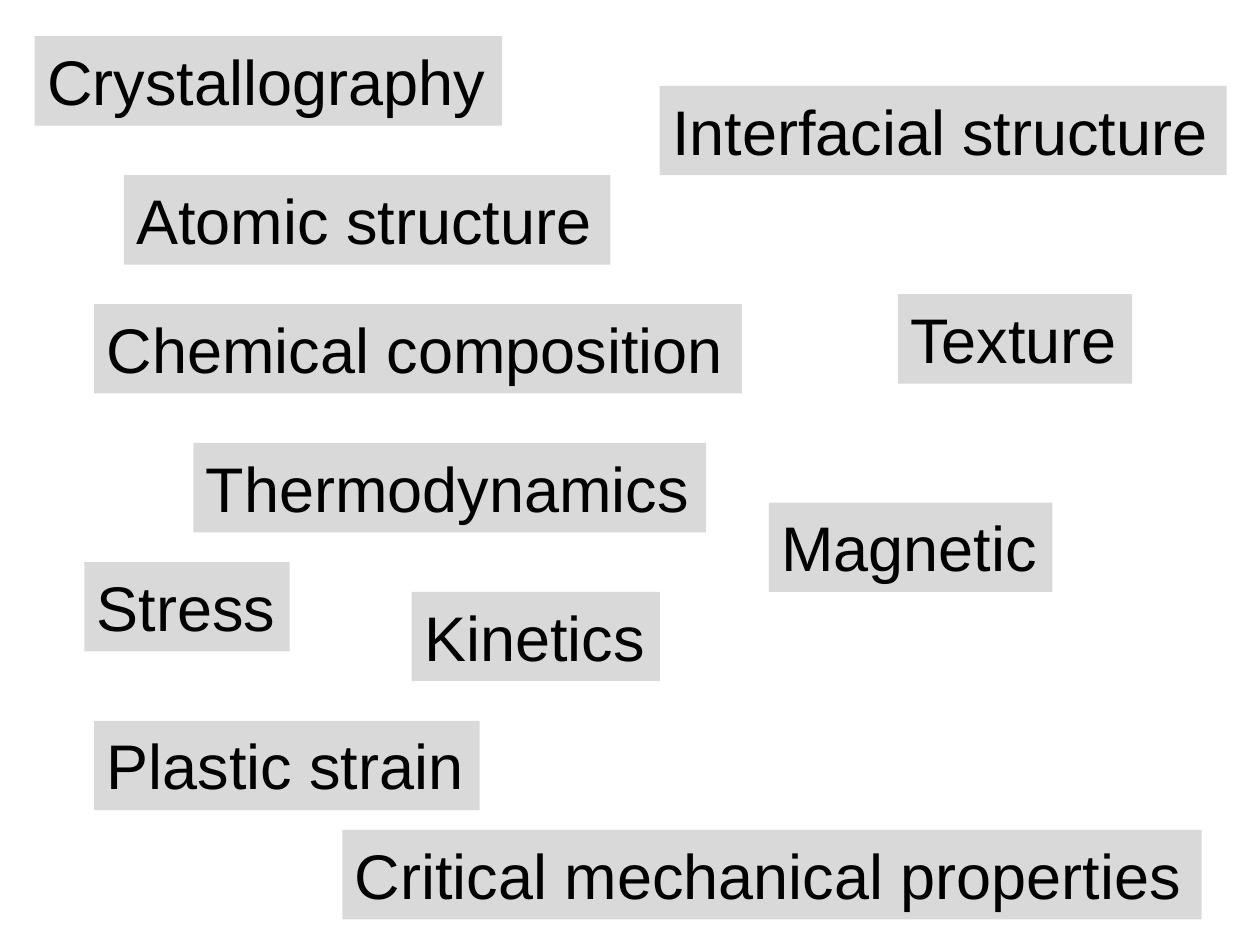
import pptx
import pptx.dml.color
import pptx.enum.text
import pptx.util

STEP = pptx.util.Mm(2)
LEFT, TOP = pptx.util.Mm(1), pptx.util.Mm(1.3)
LABEL_HEIGHT = pptx.util.Inches(0.71)

# Text, grid column, grid row, width in inches
LABELS = [
    ("Crystallography", 3, 3, 3.71),
    ("Thermodynamics", 19, 44, 4.07),
    ("Kinetics", 41, 59, 1.97),
    ("Stress", 8, 56, 1.63),
    ("Magnetic", 77, 50, 2.25),
    ("Plastic strain", 9, 72, 3.06),
    ("Interfacial structure", 66, 8, 4.5),
    ("Texture", 90, 29, 1.86),
    ("Critical mechanical properties", 34, 83, 6.82),
    ("Chemical composition", 9, 30, 5.14),
    ("Atomic structure", 12, 17, 3.86),
]


def rgb(value):
    """Return the colour for a hex string."""
    return pptx.dml.color.RGBColor.from_string(value)


def add_label(s, text, column, row, width):
    """Add a grey label with its top left corner on the grid."""
    sp = s.shapes.add_textbox(LEFT + column * STEP, TOP + row * STEP,
                              pptx.util.Inches(width), LABEL_HEIGHT)
    sp.fill.solid()
    sp.fill.fore_color.rgb = rgb("D9D9D9")
    tf = sp.text_frame
    tf.word_wrap = False
    tf.auto_size = pptx.enum.text.MSO_AUTO_SIZE.SHAPE_TO_FIT_TEXT
    tf.text = text
    font = tf.paragraphs[0].runs[0].font
    font.name = "Arial"
    font.size = pptx.util.Pt(36)
    font.color.rgb = rgb("000000")


def main():
    """Build the slide of scattered topic labels."""
    prs = pptx.Presentation()
    prs.slide_width = pptx.util.Inches(10)
    prs.slide_height = pptx.util.Inches(7.5)
    s = prs.slides.add_slide(prs.slide_layouts[6])
    for label in LABELS:
        add_label(s, *label)
    prs.save("out.pptx")


if __name__ == "__main__":
    main()
